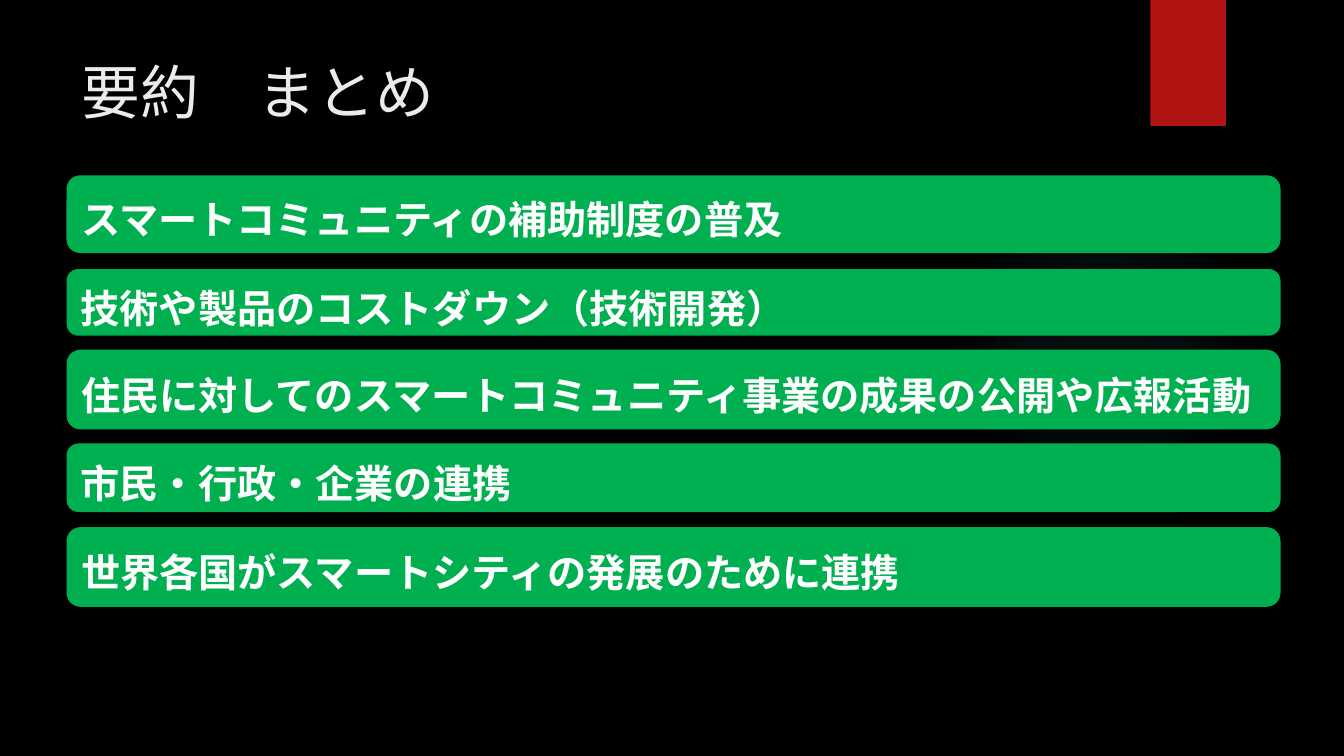
from lxml import etree
from pptx import Presentation
from pptx.dml.color import RGBColor
from pptx.enum.shapes import MSO_SHAPE
from pptx.enum.text import MSO_ANCHOR, PP_ALIGN
from pptx.oxml.ns import qn
from pptx.util import Inches, Pt

# Content: each summary bar has its text, top and height in inches
TITLE = "要約　まとめ"
BARS = [
    ("スマートコミュニティの補助制度の普及", 1.75, 0.75),
    ("技術や製品のコストダウン（技術開発）", 2.68, 0.64),
    ("住民に対してのスマートコミュニティ事業の成果の公開や広報活動", 3.48, 0.77),
    ("市民・行政・企業の連携", 4.41, 0.66),
    ("世界各国がスマートシティの発展のために連携", 5.24, 0.77),
]
BAR_LEFT, BAR_WIDTH = 0.67, 12.02
GLOW_STOPS = [(0, 7), (36, 6), (69, 0)]  # position %, opacity %

FONT = "TeX Gyre Adventor"
BLACK = RGBColor(0x00, 0x00, 0x00)
WHITE = RGBColor(0xFF, 0xFF, 0xFF)
OFF_WHITE = RGBColor(0xEB, 0xEB, 0xEB)
GREEN = RGBColor(0x00, 0xB0, 0x50)
RED = RGBColor(0xB0, 0x15, 0x13)
TEAL = RGBColor(0x50, 0xB9, 0xC1)
OVAL, RECT, ROUNDED = MSO_SHAPE.OVAL, MSO_SHAPE.RECTANGLE, MSO_SHAPE.ROUNDED_RECTANGLE
TOP, MIDDLE, LEFT = MSO_ANCHOR.TOP, MSO_ANCHOR.MIDDLE, PP_ALIGN.LEFT


def add_shape(s, kind, left, top, width, height, color):
    sp = s.shapes.add_shape(kind, Inches(left), Inches(top), Inches(width), Inches(height))
    sp.shadow.inherit = False
    sp.fill.solid()
    sp.fill.fore_color.rgb = color
    sp.line.fill.background()
    return sp


def set_text(sp, text, size, color, anchor, bold=False):
    tf = sp.text_frame
    tf.word_wrap = True
    tf.vertical_anchor = anchor
    tf.text = text
    p = tf.paragraphs[0]
    p.alignment = LEFT
    font = p.runs[0].font
    font.name, font.size, font.bold = FONT, Pt(size), bold
    font.color.rgb = color
    return tf


def set_glow(sp, color, stops):
    """Replace the solid fill with a radial gradient that fades out."""
    solid = sp._element.spPr.find(qn("a:solidFill"))
    grad = etree.Element(qn("a:gradFill"), rotWithShape="1")
    gs_list = etree.SubElement(grad, qn("a:gsLst"))
    for pos, opacity in stops:
        gs = etree.SubElement(gs_list, qn("a:gs"), pos=str(pos * 1000))
        clr = etree.SubElement(gs, qn("a:srgbClr"), val=str(color))
        etree.SubElement(clr, qn("a:alpha"), val=str(opacity * 1000))
    circle = etree.SubElement(grad, qn("a:path"), path="circle")
    etree.SubElement(circle, qn("a:fillToRect"), l="50000", t="50000", r="50000", b="50000")
    solid.getparent().replace(solid, grad)


prs = Presentation()
prs.slide_width, prs.slide_height = Inches(13.33), Inches(7.5)
s = prs.slides.add_slide(prs.slide_layouts[6])
s.background.fill.solid()
s.background.fill.fore_color.rgb = BLACK

# Backdrop: faint glow and red tab
glow = add_shape(s, OVAL, 9.41, 1.83, 3.08, 3.08, TEAL)
set_glow(glow, TEAL, GLOW_STOPS)
add_shape(s, RECT, 11.41, 0, 0.75, 1.25, RED)

# Title
title = s.shapes.add_textbox(Inches(0.71), Inches(0.5), Inches(10.29), Inches(1.53))
set_text(title, TITLE, 42, OFF_WHITE, TOP)

# Summary bars
for text, top, height in BARS:
    bar = add_shape(s, ROUNDED, BAR_LEFT, top, BAR_WIDTH, height, GREEN)
    bar.line.color.rgb = GREEN
    bar.line.width = Pt(1.5)
    tf = set_text(bar, text, 28, WHITE, MIDDLE, bold=True)
    tf.margin_left, tf.margin_right = Inches(0.1), 0
    tf.margin_top, tf.margin_bottom = Inches(0.1), 0

prs.save("out.pptx")
